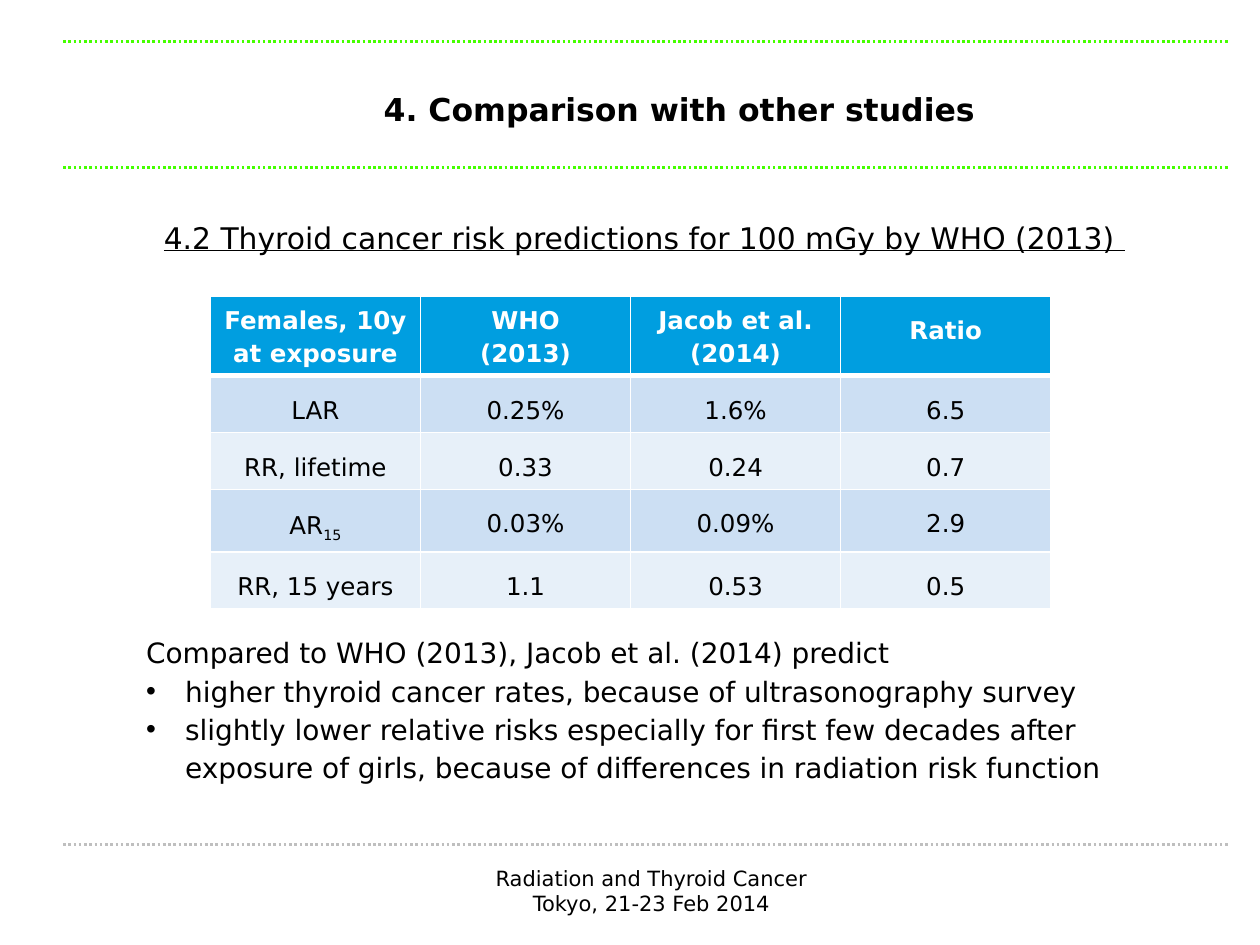
from dataclasses import dataclass
from lxml.etree import SubElement
from pptx import Presentation
from pptx.dml.color import RGBColor
from pptx.enum.dml import MSO_LINE
from pptx.enum.shapes import MSO_CONNECTOR
from pptx.enum.text import MSO_ANCHOR, MSO_AUTO_SIZE, PP_ALIGN
from pptx.oxml.ns import qn
from pptx.util import Inches, Pt

TITLE = "4. Comparison with other studies "
HEADING = "4.2 Thyroid cancer risk predictions for 100 mGy by WHO (2013) "
FOOTER = "Radiation and Thyroid Cancer\nTokyo, 21-23 Feb 2014"
HEAD = ["Females, 10y at exposure", "WHO\n(2013)", "Jacob et al. (2014)", "Ratio"]
ROWS = [
    ["LAR", "0.25%", "1.6%", "6.5"],
    ["RR, lifetime", "0.33", "0.24", "0.7"],
    [("AR", "15"), "0.03%", "0.09%", "2.9"],
    ["RR, 15 years", "1.1", "0.53", "0.5"],
]
INTRO = "Compared to WHO (2013), Jacob et al. (2014) predict"
POINTS = [
    "higher thyroid cancer rates, because of ultrasonography survey",
    "slightly lower relative risks especially for first few decades after "
    "exposure of girls, because of differences in radiation risk function",
]


@dataclass(frozen=True)
class Theme:
    font: str = "DejaVu Sans"
    black: str = "000000"
    white: str = "FFFFFF"
    green: str = "46FF00"
    grey: str = "BFBFBF"
    blue: str = "009EE0"
    bands: tuple = ("CCDFF3", "E7F0F9")
    title: int = 18
    heading: int = 17
    body: int = 16
    table: int = 14
    footer: int = 12


THEME = Theme()
RULES = [(0.33, THEME.green), (1.33, THEME.green), (6.7, THEME.grey)]


def color(code):
    return RGBColor.from_string(code)


def place(shape, *box):
    shape.left, shape.top, shape.width, shape.height = map(Inches, box)


def style(para, size, shade=THEME.black, align=PP_ALIGN.CENTER, space=None, bold=False):
    para.alignment = align
    para.space_before = Pt(0)
    if space:
        para.line_spacing = space
    font = para.font
    font.name, font.size, font.bold = THEME.font, Pt(size), bold
    font.color.rgb = color(shade)


def indent(para, mark=None):
    props = para._p.get_or_add_pPr()
    hang = Inches(0.31) if mark else 0
    props.set("marL", str(hang))
    props.set("indent", str(-hang))
    if mark:
        SubElement(props, qn("a:buFont"), typeface="Arial")
        SubElement(props, qn("a:buChar"), char=mark)
    else:
        SubElement(props, qn("a:buNone"))


def add_rule(slide, top, shade):
    rule = slide.shapes.add_connector(
        MSO_CONNECTOR.STRAIGHT, Inches(0.5), Inches(top), Inches(9.75), Inches(top))
    rule.line.color.rgb = color(shade)
    rule.line.width = Pt(1.5)
    rule.line.dash_style = MSO_LINE.ROUND_DOT
    SubElement(rule._element.spPr, qn("a:effectLst"))


def add_text(slide, box, text, size, space=None, wrap=True):
    frame = slide.shapes.add_textbox(*map(Inches, box)).text_frame
    frame.word_wrap = wrap
    para = frame.paragraphs[0]
    para.text = text
    style(para, size, space=space)
    return para


def add_title(slide):
    title = slide.shapes.title
    place(title, 1.14, 0.63, 8.59, 0.44)
    frame = title.text_frame
    frame.text = TITLE
    frame.auto_size = MSO_AUTO_SIZE.NONE
    frame.vertical_anchor = MSO_ANCHOR.MIDDLE
    style(frame.paragraphs[0], THEME.title, space=Pt(24), bold=True)


def add_body(slide):
    body = slide.placeholders[1]
    place(body, 1.06, 4.96, 8.43, 1.33)
    body.fill.solid()
    body.fill.fore_color.rgb = color(THEME.white)
    frame = body.text_frame
    frame.text = "\n".join([INTRO, *POINTS])
    frame.auto_size = MSO_AUTO_SIZE.NONE
    for index, para in enumerate(frame.paragraphs):
        indent(para, "•" if index else None)
        style(para, THEME.body, align=PP_ALIGN.LEFT, space=1.14)


def edge(cell, row):
    props = cell._tc.get_or_add_tcPr()
    thick = {"lnB": row == 0, "lnT": row == 1}
    for side in ("lnL", "lnR", "lnT", "lnB"):
        line = SubElement(props, qn("a:" + side), w=str(Pt(3 if thick.get(side) else 1)))
        fill = SubElement(line, qn("a:solidFill"))
        SubElement(fill, qn("a:srgbClr"), val=THEME.white)


def fill_cell(cell, text, row, last):
    edge(cell, row)
    cell.fill.solid()
    cell.fill.fore_color.rgb = color(THEME.bands[(row - 1) % 2] if row else THEME.blue)
    para = cell.text_frame.paragraphs[0]
    base, sub = text if isinstance(text, tuple) else (text, None)
    para.text = base
    if sub:
        run = para.add_run()
        run.text = sub
        run._r.get_or_add_rPr().set("baseline", "-25000")
    head = row == 0
    style(para, THEME.table, THEME.white if head else THEME.black,
          space=1.14 if head and not last else 1.5, bold=head)


def add_grid(slide):
    data = [HEAD, *ROWS]
    wide = len(HEAD)
    table = slide.shapes.add_table(
        len(data), wide, Inches(1.67), Inches(2.35),
        Inches(6.67), Inches(0.41 * len(data))).table
    for row, line in enumerate(data):
        for col, text in enumerate(line):
            fill_cell(table.cell(row, col), text, row, col == wide - 1)


def main():
    deck = Presentation()
    deck.slide_width, deck.slide_height = Inches(10), Inches(7.5)
    slide = deck.slides.add_slide(deck.slide_layouts[1])
    for top, shade in RULES:
        add_rule(slide, top, shade)
    add_text(slide, (3.82, 6.82, 2.7, 0.5), FOOTER, THEME.footer, wrap=False)
    add_title(slide)
    heading = add_text(slide, (0.43, 1.55, 9.37, 0.53), HEADING, THEME.heading, 1.5)
    heading.font.underline = True
    add_body(slide)
    add_grid(slide)
    deck.save("out.pptx")


if __name__ == "__main__":
    main()
